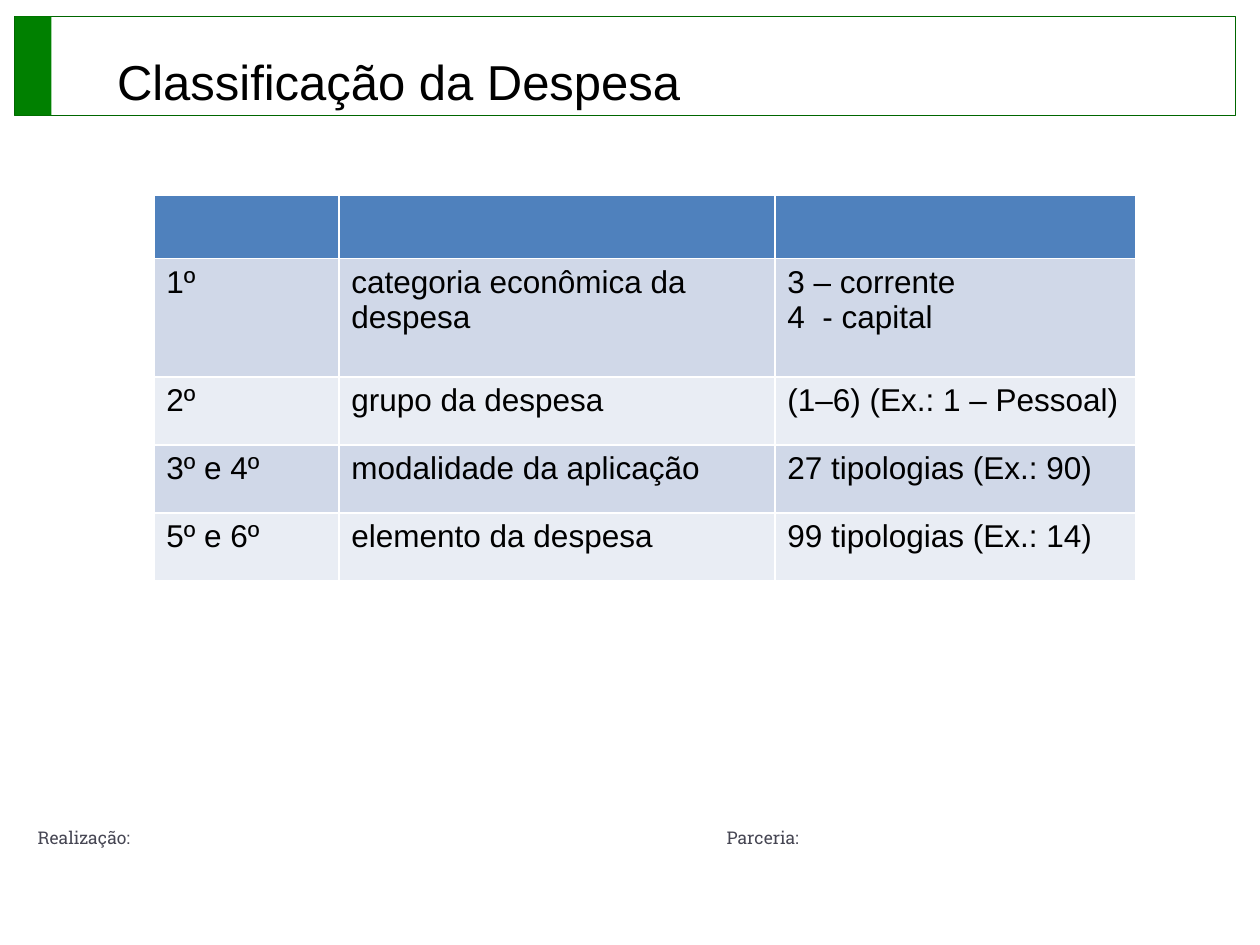
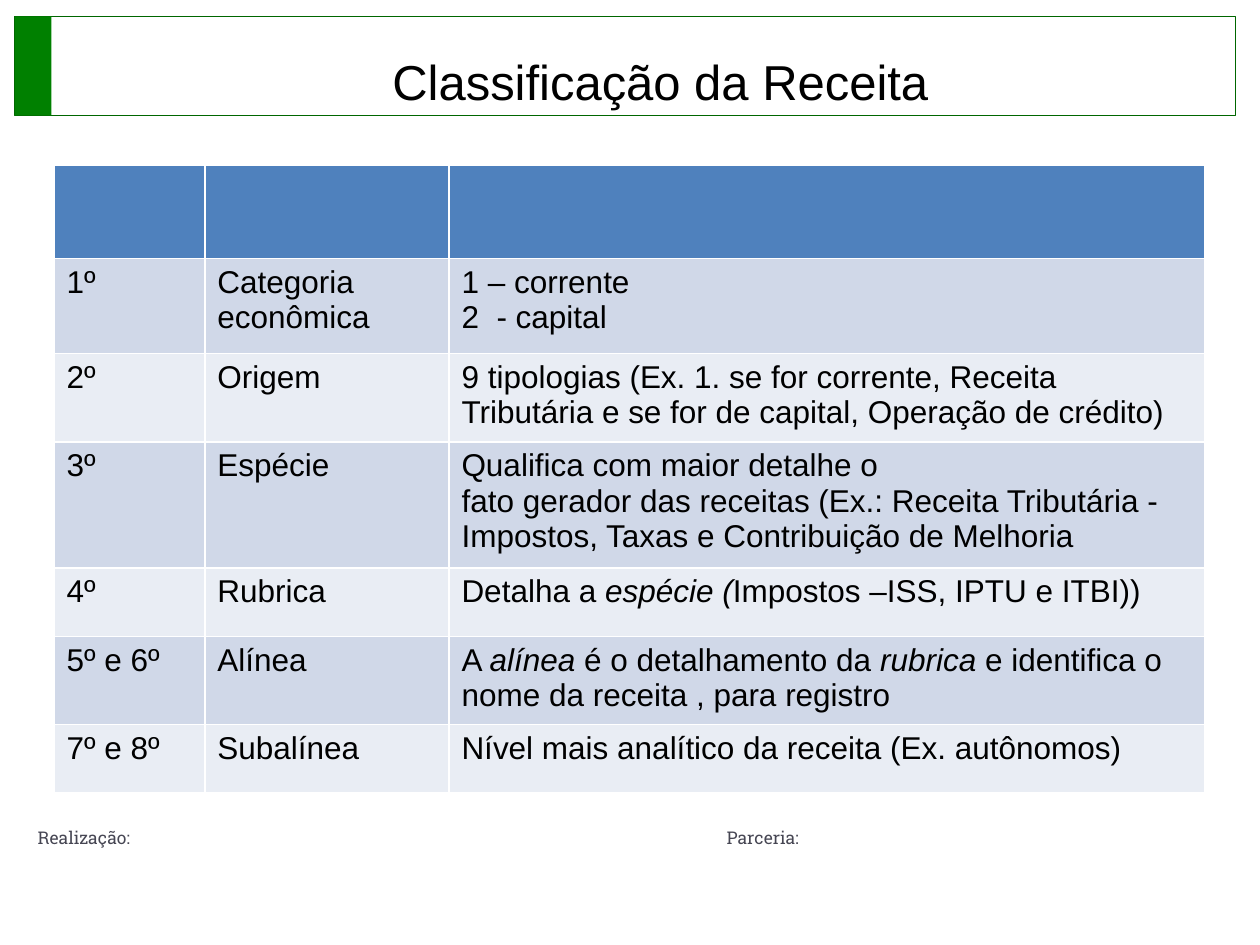
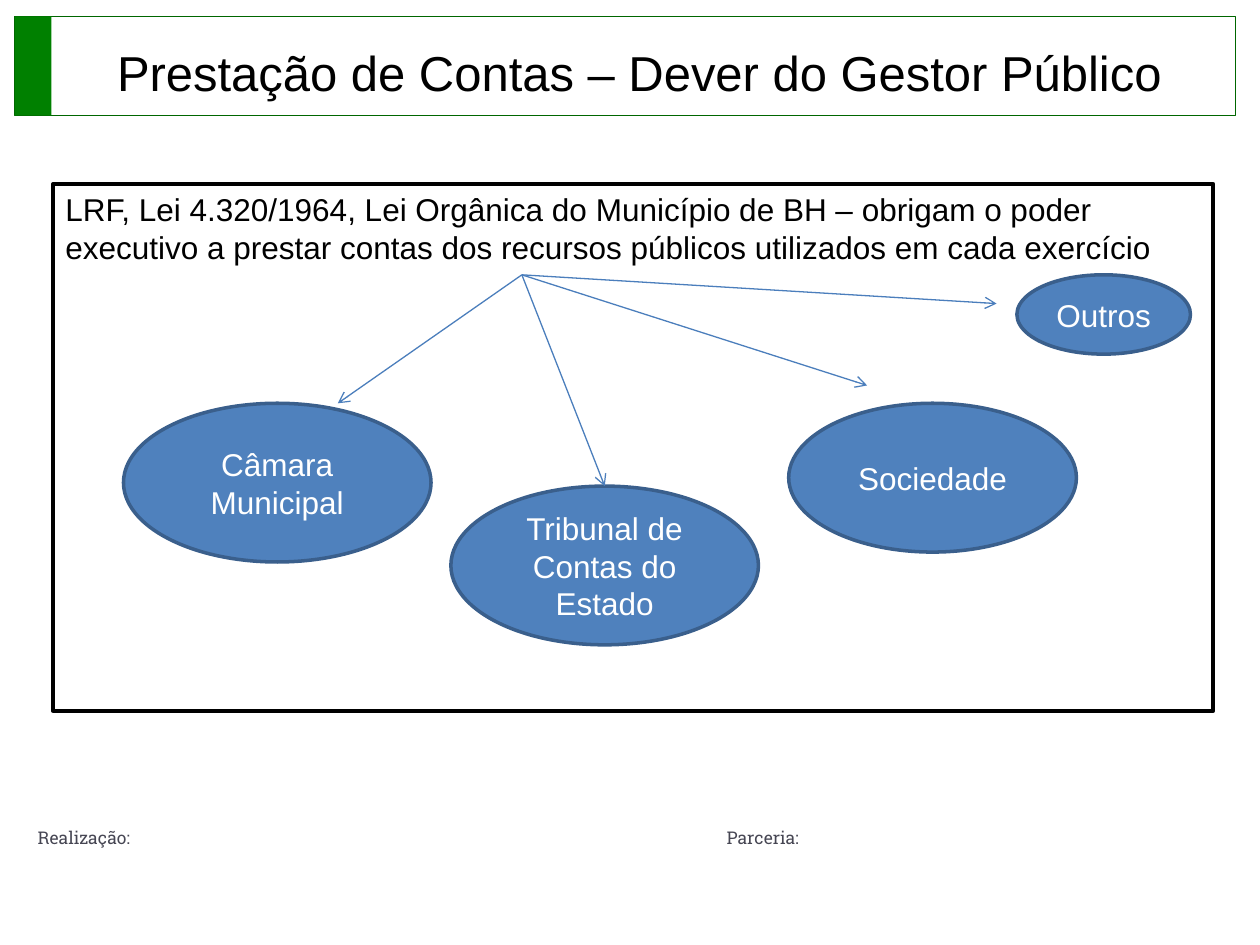
"""Builds three slides on public budget classification and accountability."""
from lxml import etree
from pptx import Presentation
from pptx import util as u
from pptx.dml.color import RGBColor
from pptx.enum import shapes, text
from pptx.oxml.ns import qn

BLUE, BANDS = "4F81BD", ("D0D8E8", "E9EDF4")
BLACK, WHITE, GREEN = "000000", "FFFFFF", "008000"
LEFT, CENTER = text.PP_ALIGN.LEFT, text.PP_ALIGN.CENTER
FOOTERS = [("Realização:", 0.51), ("Parceria:", 14.4)]

# In cell text, "\n" starts a paragraph and "|" switches italics.
EXPENSE = {
    "at": (3.1, 3.94),
    "cols": (3.73, 8.79, 7.27),
    "heights": (1.27, 2.39, 1.37, 1.37, 1.37),
    "rows": [
        ("1º", "categoria econômica da despesa", "3 – corrente\n4  - capital"),
        ("2º", "grupo da despesa", "(1–6) (Ex.: 1 – Pessoal)"),
        ("3º e 4º", "modalidade da aplicação", "27 tipologias (Ex.: 90)"),
        ("5º e 6º", "elemento da despesa", "99 tipologias (Ex.: 14)"),
    ],
}
REVENUE = {
    "at": (1.09, 3.33),
    "cols": (3.04, 4.92, 15.24),
    "heights": (1.88, 1.92, 1.67, 2.38, 1.38, 1.67, 1.37),
    "rows": [
        ("1º", "Categoria econômica", "1 – corrente\n2  - capital"),
        ("2º", "Origem", "9 tipologias (Ex. 1. se for corrente, Receita Tributária "
         "e se for de capital, Operação de crédito)"),
        ("3º", "Espécie", "Qualifica com maior detalhe o\nfato gerador das receitas "
         "(Ex.: Receita Tributária - Impostos, Taxas e Contribuição de Melhoria"),
        ("4º", "Rubrica", "Detalha a |espécie (|Impostos –ISS, IPTU e ITBI))"),
        ("5º e 6º", "Alínea", "A |alínea |é o detalhamento da |rubrica |e identifica o "
         "nome da receita , para registro"),
        ("7º e 8º", "Subalínea", "Nível mais analítico da receita (Ex. autônomos)"),
    ],
}
LAW = ("LRF, Lei 4.320/1964, Lei Orgânica do Município de BH – obrigam o poder executivo "
       "a prestar contas dos recursos públicos utilizados em cada exercício")
ARROW_START = (10.52, 5.54)
RECIPIENTS = [
    ("Câmara Municipal", (2.49, 8.13, 6.2, 3.2), (6.81, 8.13)),
    ("Tribunal de Contas do Estado", (9.09, 9.8, 6.2, 3.2), (12.19, 9.8)),
    ("Sociedade", (15.9, 8.13, 5.8, 3), (17.48, 7.77)),
    ("Outros", (20.5, 5.54, 3.5, 1.6), (20.09, 6.12)),
]


def rgb(value):
    return RGBColor.from_string(value)


def cm(values):
    return [u.Cm(v) for v in values]


def write(tf, content, size=18, color=BLACK, font="Arial", align=LEFT):
    tf.word_wrap = True
    for i, line in enumerate(content.split("\n")):
        p = tf.add_paragraph() if i else tf.paragraphs[0]
        p.alignment = align
        for j, piece in enumerate(line.split("|")):
            r = p.add_run()
            r.text = piece
            r.font.name, r.font.size = font, u.Pt(size)
            r.font.color.rgb = rgb(color)
            r.font.italic = j % 2 == 1


def add_text(s, at, content, **style):
    write(s.shapes.add_textbox(*cm(at)).text_frame, content, **style)


def add_shape(s, at, kind=shapes.MSO_SHAPE.RECTANGLE, fill=None, line=None, width=1):
    sp = s.shapes.add_shape(kind, *cm(at))
    sp.shadow.inherit = False
    for part, color in ((sp.fill, fill), (sp.line.fill, line)):
        if color:
            part.solid()
            part.fore_color.rgb = rgb(color)
        else:
            part.background()
    if line:
        sp.line.width = u.Pt(width)
    return sp


def add_arrow(s, start, end):
    c = s.shapes.add_connector(shapes.MSO_CONNECTOR.STRAIGHT, *cm(start + end))
    c.line.color.rgb = rgb("4B7EBC")
    c.line.width = u.Pt(0.75)
    etree.SubElement(c.line._get_or_add_ln(), qn("a:tailEnd"), type="arrow")
    etree.SubElement(c._element.spPr, qn("a:effectLst"))


def add_slide(prs, title, top=0.91, align=LEFT):
    s = prs.slides.add_slide(prs.slide_layouts[6])
    for label, left in FOOTERS:
        add_text(s, (left, 16.54, 9, 0.79), label, size=10, color="464653", font="Roboto Slab")
    add_shape(s, (0.3, 0.33, 24.61, 2), line="006600", width=0.5)
    add_shape(s, (0.3, 0.33, 0.74, 2), fill=GREEN)
    add_text(s, (2.11, top, 22.4, 1.27), title, size=28, align=align)
    return s


def add_grid(s, at, cols, heights, rows):
    size = (sum(cols), sum(heights))
    table = s.shapes.add_table(len(heights), len(cols), *cm(at + size)).table
    for col, width in zip(table.columns, cols):
        col.width = u.Cm(width)
    for i, height in enumerate(heights):
        table.rows[i].height = u.Cm(height)
        for j in range(len(cols)):
            cell = table.cell(i, j)
            cell.fill.solid()
            cell.fill.fore_color.rgb = rgb(BANDS[(i - 1) % 2] if i else BLUE)
            if i:
                write(cell.text_frame, rows[i - 1][j])


def add_accountability(s):
    frame = add_shape(s, (1.07, 3.71, 23.39, 10.62), line=BLACK, width=2.25)
    frame.text_frame.vertical_anchor = text.MSO_ANCHOR.TOP
    write(frame.text_frame, LAW)
    for name, at, arrow_end in RECIPIENTS:
        sp = add_shape(s, at, shapes.MSO_SHAPE.OVAL, BLUE, "3A5F8C", 2)
        sp.text_frame.vertical_anchor = text.MSO_ANCHOR.MIDDLE
        write(sp.text_frame, name, color=WHITE, align=CENTER)
        add_arrow(s, ARROW_START, arrow_end)


def main():
    prs = Presentation()
    prs.slide_width, prs.slide_height = cm((25.4, 19.05))
    add_grid(add_slide(prs, "Classificação da Despesa"), **EXPENSE)
    add_grid(add_slide(prs, "Classificação da Receita", align=CENTER), **REVENUE)
    add_accountability(add_slide(prs, "Prestação de Contas – Dever do Gestor Público", top=0.74))
    prs.save("out.pptx")


if __name__ == "__main__":
    main()
